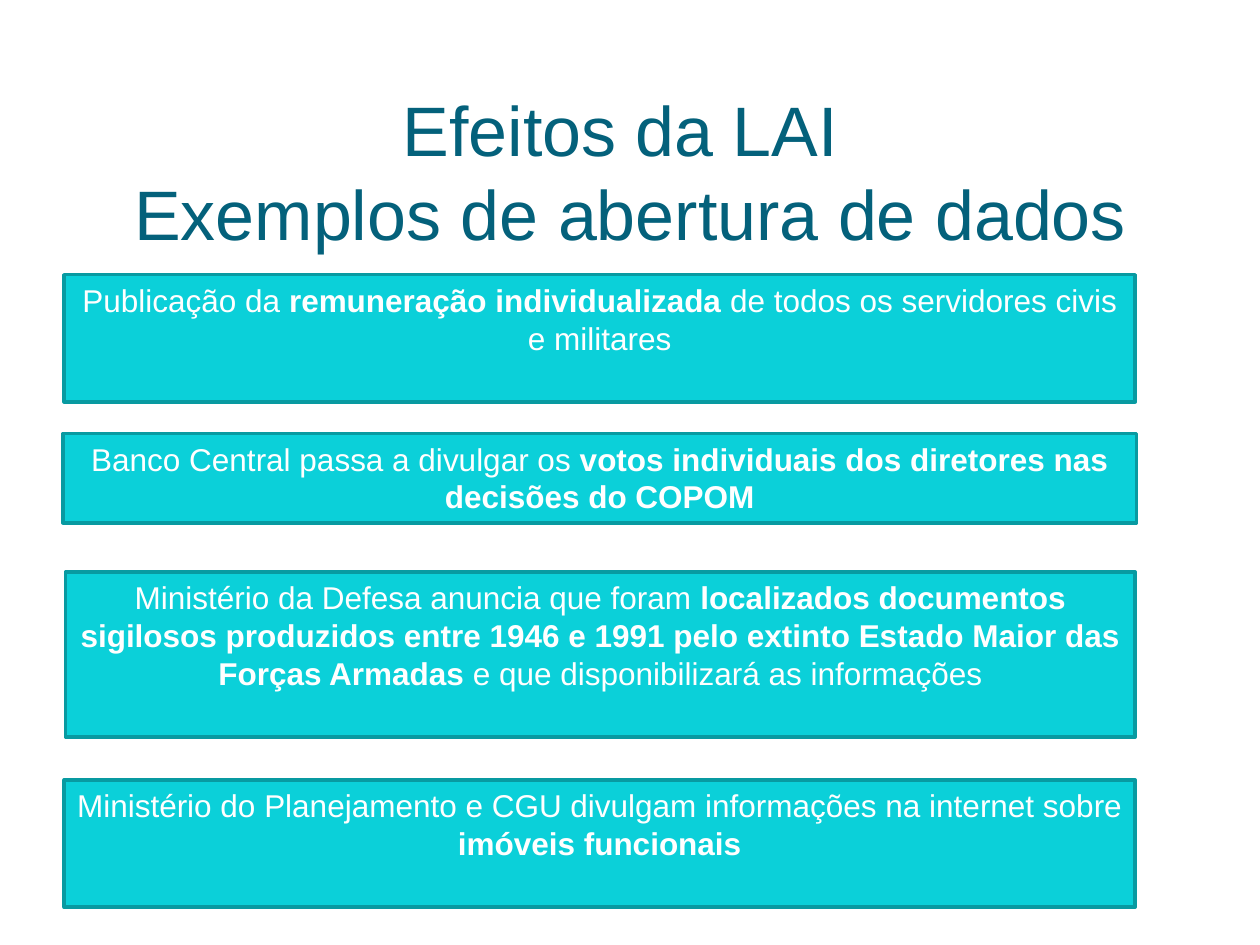
from dataclasses import dataclass

from pptx import Presentation
from pptx.dml.color import RGBColor
from pptx.enum import shapes, text
from pptx.util import Inches, Pt


@dataclass(frozen=True)
class Theme:
    font: str = "Arial"
    heading: RGBColor = RGBColor(0x04, 0x61, 0x7B)
    fill: RGBColor = RGBColor(0x0B, 0xD0, 0xD9)
    border: RGBColor = RGBColor(0x08, 0x9A, 0xA1)
    white: RGBColor = RGBColor(0xFF, 0xFF, 0xFF)
    heading_size: Pt = Pt(40)
    example_size: Pt = Pt(18)
    border_width: Pt = Pt(2)


theme = Theme()


def style_paragraph(paragraph, size, color):
    paragraph.alignment = text.PP_ALIGN.CENTER
    paragraph.font.name = theme.font
    paragraph.font.size = size
    paragraph.font.color.rgb = color


deck = Presentation()
deck.slide_width, deck.slide_height = Inches(10), Inches(7.5)
slide = deck.slides.add_slide(deck.slide_layouts[6])

# Heading
heading = slide.shapes.add_textbox(Inches(0.5), Inches(0.77), Inches(9), Inches(1.25)).text_frame
heading.word_wrap = True
heading.vertical_anchor = text.MSO_ANCHOR.BOTTOM
heading.margin_left = heading.margin_right = heading.margin_bottom = 0
heading.text = "Efeitos da LAI \vExemplos de abertura de dados"
style_paragraph(heading.paragraphs[0], theme.heading_size, theme.heading)

# Examples: left, top, width, height, then (wording, bold) pieces
examples = [
    (0.51, 2.18, 8.5, 1.01, [
        ("Publicação da ", False),
        ("remuneração individualizada ", True),
        ("de todos os servidores civis e militares", False)]),
    (0.5, 3.44, 8.52, 0.71, [
        ("Banco Central passa a divulgar os ", False),
        ("votos individuais dos diretores nas decisões do COPOM", True)]),
    (0.52, 4.54, 8.49, 1.31, [
        ("Ministério da Defesa anuncia que foram ", False),
        ("localizados documentos sigilosos produzidos entre 1946 e 1991 "
         "pelo extinto Estado Maior das Forças Armadas ", True),
        ("e que disponibilizará as informações", False)]),
    (0.51, 6.19, 8.5, 1.01, [
        ("Ministério do Planejamento e CGU divulgam informações na internet sobre ", False),
        ("imóveis funcionais", True)]),
]

for *box, pieces in examples:
    example = slide.shapes.add_shape(shapes.MSO_SHAPE.RECTANGLE, *map(Inches, box))
    example.shadow.inherit = False
    example.fill.solid()
    example.fill.fore_color.rgb = theme.fill
    example.line.color.rgb = theme.border
    example.line.width = theme.border_width
    example.text_frame.word_wrap = True
    example.text_frame.vertical_anchor = text.MSO_ANCHOR.TOP
    sentence = example.text_frame.paragraphs[0]
    style_paragraph(sentence, theme.example_size, theme.white)
    for wording, bold in pieces:
        piece = sentence.add_run()
        piece.text = wording
        piece.font.bold = bold

deck.save("out.pptx")
